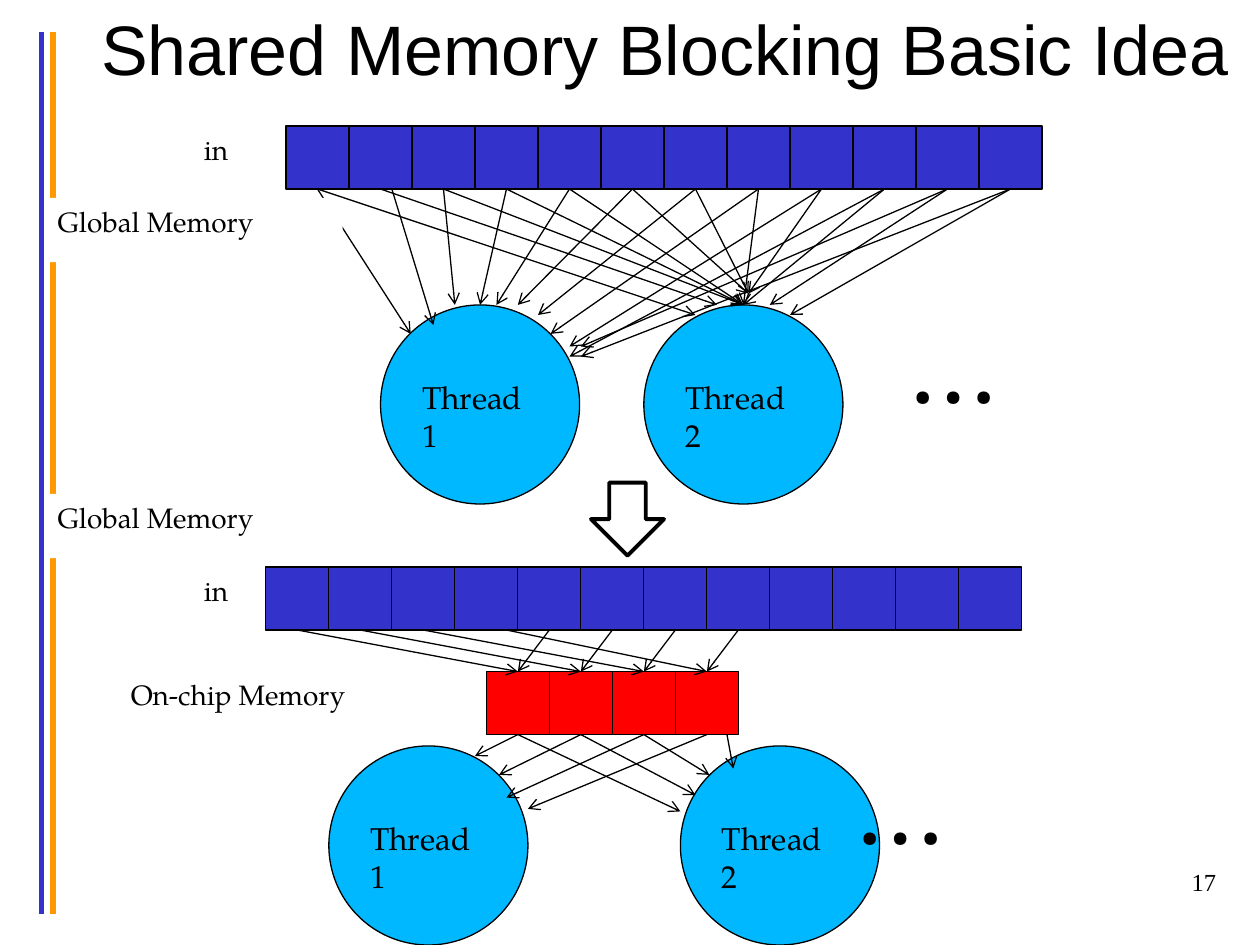
from lxml import etree
from pptx import Presentation
from pptx.dml.color import RGBColor
from pptx.enum import shapes, text
from pptx.oxml import ns
from pptx.util import Inches, Pt

BLACK = RGBColor(0x00, 0x00, 0x00)
WHITE = RGBColor(0xFF, 0xFF, 0xFF)
BLUE = RGBColor(0x33, 0x33, 0xCC)
ORANGE = RGBColor(0xFF, 0x99, 0x00)
SKY = RGBColor(0x00, 0xB8, 0xFF)
RED = RGBColor(0xFF, 0x00, 0x00)
BODY_FONT = "TeX Gyre Pagella"

CELL = 0.5
THREAD_SIZE = 1.58

# Margin rules: x, colour
RULES = [(0.33, BLUE), (0.42, ORANGE)]

# Memory rows: left, top, number of cells, colour
GLOBAL_BEFORE = (2.27, 1, 12, BLUE)
GLOBAL_AFTER = (2.11, 4.5, 12, BLUE)
ON_CHIP = (3.86, 5.33, 4, RED)

# Threads: name, left, top
THREADS_BEFORE = [("Thread 1", 3.02, 2.42), ("Thread 2", 5.11, 2.42)]
THREADS_AFTER = [("Thread 1", 2.61, 5.92), ("Thread 2", 5.4, 5.92)]

# Reads: the arrow tip for each source cell, in cell order
READS_BEFORE_1 = [(3.26, 2.65), (3.44, 2.58), (3.61, 2.42), (3.81, 2.42),
                  (3.94, 2.42), (4.11, 2.42), (4.27, 2.5), (4.37, 2.65),
                  (4.52, 2.75), (4.52, 2.83), (4.61, 2.75), (4.61, 2.83)]
READS_BEFORE_2 = [(5.52, 2.5), (5.69, 2.42), (5.9, 2.42), (5.9, 2.42),
                  (5.9, 2.42), (5.94, 2.33), (5.94, 2.33), (5.9, 2.42),
                  (5.94, 2.33), (5.9, 2.42), (6.11, 2.42), (6.27, 2.5)]
READS_AFTER_1 = [(3.77, 6), (3.96, 6.15), (4.02, 6.33), (4.19, 6.42)]
READS_AFTER_2 = [(5.4, 6.44), (5.52, 6.31), (5.63, 6.15), (5.82, 6.1)]

# Arrows that start beside the middle of their cell: cell number -> x
OFFSET_BEFORE_1 = {1: 3.11}
OFFSET_LOAD = {3: 4.02}
OFFSET_AFTER_2 = {3: 5.77}

# Labels: wording, left, top, width
IN_LABELS = [("in", 1.52, 1, 0.5), ("in", 1.52, 4.5, 0.5)]
MEMORY_LABELS = [("Global Memory", 0.36, 1.57, 2.36),
                 ("Global Memory", 0.36, 3.92, 2.36),
                 ("On-chip Memory", 0.94, 5.33, 2.63)]
ELLIPSES = [(7.11, 2.33), (6.69, 5.83)]

prs = Presentation()
prs.slide_width, prs.slide_height = Inches(10), Inches(7.5)
slide = prs.slides.add_slide(prs.slide_layouts[6])


def write(shape, wording, size, font=BODY_FONT, align=text.PP_ALIGN.LEFT,
          anchor=text.MSO_ANCHOR.TOP):
    frame = shape.text_frame
    frame.word_wrap = True
    frame.vertical_anchor = anchor
    paragraph = frame.paragraphs[0]
    paragraph.text = wording
    paragraph.alignment = align
    paragraph.font.size = Pt(size)
    paragraph.font.name = font
    paragraph.font.color.rgb = BLACK


def add_label(wording, left, top, width, height, size, fill=None, **style):
    label = slide.shapes.add_textbox(*map(Inches, (left, top, width, height)))
    if fill is not None:
        label.fill.solid()
        label.fill.fore_color.rgb = fill
    write(label, wording, size, **style)


def add_outlined(preset, left, top, size, fill, line_width=0.75):
    shape = slide.shapes.add_shape(
        preset, *map(Inches, (left, top, size, size)))
    shape.shadow.inherit = False
    shape.fill.solid()
    shape.fill.fore_color.rgb = fill
    shape.line.color.rgb = BLACK
    shape.line.width = Pt(line_width)
    return shape


def add_line(start, end, color=BLACK, width=0.75):
    line = slide.shapes.add_connector(
        shapes.MSO_CONNECTOR.STRAIGHT, *map(Inches, (*start, *end)))
    line.line.color.rgb = color
    line.line.width = Pt(width)
    etree.SubElement(line._element.spPr, ns.qn("a:effectLst"))
    return line


def add_row(left, top, count, color):
    return [add_outlined(shapes.MSO_SHAPE.RECTANGLE, left + i * CELL, top,
                         CELL, color) for i in range(count)]


def add_threads(threads):
    for name, left, top in threads:
        thread = add_outlined(shapes.MSO_SHAPE.OVAL, left, top, THREAD_SIZE, SKY)
        write(thread, name, 18)
        thread.text_frame.margin_top = Inches(0.35)


def add_arrow(cell, tip, start_x=None):
    """Arrow from the bottom of a cell, joined to it unless start_x is given."""
    middle = (cell.left + cell.width / 2) / Inches(1)
    bottom = (cell.top + cell.height) / Inches(1)
    arrow = add_line((start_x or middle, bottom), tip)
    if start_x is None:
        arrow.begin_connect(cell, 2)
    etree.SubElement(arrow.line._get_or_add_ln(), ns.qn("a:tailEnd"), type="arrow")
    return arrow


def add_reads(cells, tips, offsets=None):
    for i, (cell, tip) in enumerate(zip(cells, tips)):
        add_arrow(cell, tip, (offsets or {}).get(i))


for x, color in RULES:
    add_line((x, 0.25), (x, 7.25), color, 3)
add_label("Shared Memory Blocking Basic Idea", 0.55, 0, 9.45, 0.75, 40,
          font="Arial", align=text.PP_ALIGN.CENTER,
          anchor=text.MSO_ANCHOR.MIDDLE)

# Before: every thread reads global memory
global_cells = add_row(*GLOBAL_BEFORE)
add_threads(THREADS_BEFORE)
add_reads(global_cells, READS_BEFORE_1, OFFSET_BEFORE_1)
add_reads(global_cells, READS_BEFORE_2)

# After: a block is loaded on chip, and threads read it there
global_cells = add_row(*GLOBAL_AFTER)
add_threads(THREADS_AFTER)
chip_cells = add_row(*ON_CHIP)
for i, cell in enumerate(global_cells[:2 * len(chip_cells)]):
    slot = i % len(chip_cells)
    tip = (ON_CHIP[0] + (slot + 0.5) * CELL, ON_CHIP[1])
    add_arrow(cell, tip, OFFSET_LOAD.get(i)).end_connect(chip_cells[slot], 0)
add_reads(chip_cells, READS_AFTER_1)
add_reads(chip_cells, READS_AFTER_2, OFFSET_AFTER_2)

for left, top in ELLIPSES:
    add_label("…", left, top, 1.67, 1.11, 60)
for label in IN_LABELS:
    add_label(*label, 0.51, 16)
for label in MEMORY_LABELS:
    add_label(*label, 0.51, 16, fill=WHITE)
add_outlined(shapes.MSO_SHAPE.DOWN_ARROW, 4.69, 3.83, 0.58, WHITE, 2.25)
add_label("17", 7.67, 6.83, 2.08, 0.5, 14, font="Times New Roman",
          align=text.PP_ALIGN.RIGHT)

prs.save("out.pptx")
